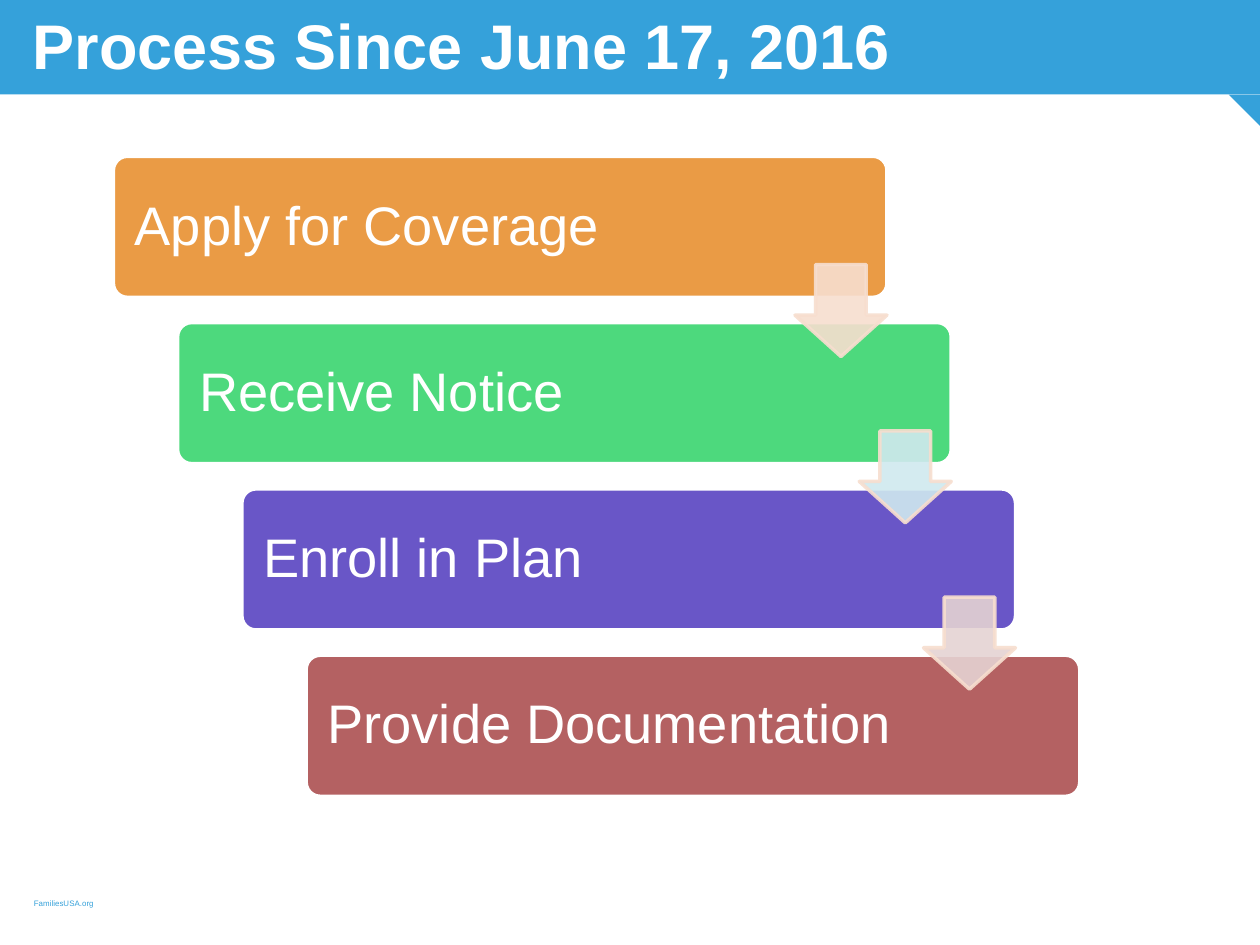
from lxml import etree
from pptx import Presentation
from pptx.dml.color import RGBColor
from pptx.enum.shapes import MSO_SHAPE
from pptx.enum.text import MSO_ANCHOR
from pptx.oxml.ns import qn
from pptx.util import Inches, Pt

RECTANGLE = MSO_SHAPE.RECTANGLE
ROUNDED = MSO_SHAPE.ROUNDED_RECTANGLE
TRIANGLE = MSO_SHAPE.RIGHT_TRIANGLE
ARROW = MSO_SHAPE.DOWN_ARROW
TOP, MIDDLE = MSO_ANCHOR.TOP, MSO_ANCHOR.MIDDLE

WIDTH, HEIGHT = 10, 7.5
BLUE, WHITE, PEACH = "35A1DA", "FFFFFF", "F7DECF"

# Staircase grid: first step, offset to the next one, and sizes
LEFT, FIRST_TOP = 0.9, 1.24
STEP_X, STEP_Y = 0.51, 1.32
STEP_WIDTH, STEP_HEIGHT = 6.14, 1.12
ARROW_SIZE = 0.73

STEPS = [
    ("Apply for Coverage", "EA9B45"),
    ("Receive Notice", "4DD97D"),
    ("Enroll in Plan", "6956C7"),
    ("Provide Documentation", "B46162"),
]
ARROW_FILLS = [PEACH, "D0E9EF", "E5D3D3"]


def color(hex_value):
    return RGBColor.from_string(hex_value)


def paint(fill, hex_value, opacity):
    fill.solid()
    fill.fore_color.rgb = color(hex_value)
    if opacity < 100:
        for srgb in fill._xPr.iter(qn("a:srgbClr")):
            etree.SubElement(srgb, qn("a:alpha"), val=str(opacity * 1000))


def add_shape(slide, kind, left, top, width, height, fill, line=None,
              adjustments=(), opacity=100):
    shape = slide.shapes.add_shape(
        kind, Inches(left), Inches(top), Inches(width), Inches(height))
    shape.shadow.inherit = False
    for index, value in enumerate(adjustments):
        shape.adjustments[index] = value
    paint(shape.fill, fill, opacity)
    if line:
        shape.line.width = Pt(2)
        paint(shape.line.fill, line, opacity)
    else:
        shape.line.fill.background()
    return shape


def add_text(slide, text, left, top, width, height, size, hex_value=WHITE,
             bold=False, anchor=TOP, inset=None, spacing=None):
    box = slide.shapes.add_textbox(
        Inches(left), Inches(top), Inches(width), Inches(height))
    frame = box.text_frame
    frame.word_wrap = True
    frame.vertical_anchor = anchor
    if inset is not None:
        frame.margin_left = frame.margin_right = Inches(inset)
        frame.margin_top = frame.margin_bottom = Inches(inset)
    paragraph = frame.paragraphs[0]
    paragraph.line_spacing = spacing
    run = paragraph.add_run()
    run.text = text
    run.font.name = "Arial"
    run.font.size = Pt(size)
    run.font.bold = bold
    run.font.color.rgb = color(hex_value)


def add_frame(slide):
    band, fold = HEIGHT / 10, WIDTH / 40
    add_shape(slide, RECTANGLE, 0, 0, WIDTH, band, BLUE)
    corner = add_shape(slide, TRIANGLE, WIDTH - fold, band, fold, fold, BLUE)
    corner.rotation = 180
    add_text(slide, "FamiliesUSA.org", 0.17, 7.08, 3.42, 0.18, 4.5, BLUE)
    add_text(slide, "Process Since June 17, 2016", 0.16, 0, 8.92, 0.71, 36,
             bold=True)


def add_step(slide, row, label, fill):
    left, top = LEFT + row * STEP_X, FIRST_TOP + row * STEP_Y
    add_shape(slide, ROUNDED, left, top, STEP_WIDTH, STEP_HEIGHT, fill,
              line=WHITE, adjustments=[0.1])
    add_text(slide, label, left + 0.04, top + 0.04, 4.84, 1.05, 31,
             anchor=MIDDLE, inset=0.13, spacing=0.9)


def add_step_arrow(slide, row, fill):
    # Right edge lines up with the step it leaves
    left = LEFT + row * STEP_X + STEP_WIDTH - ARROW_SIZE
    top = FIRST_TOP + row * STEP_Y + 0.86
    add_shape(slide, ARROW, left, top, ARROW_SIZE, ARROW_SIZE, fill,
              line=PEACH, adjustments=[0.55, 0.45], opacity=90)


def main():
    presentation = Presentation()
    presentation.slide_width = Inches(WIDTH)
    presentation.slide_height = Inches(HEIGHT)
    slide = presentation.slides.add_slide(presentation.slide_layouts[6])

    # Title band, corner fold and footer
    add_frame(slide)

    # Steps first, so that the arrows lie on top
    for row, (label, fill) in enumerate(STEPS):
        add_step(slide, row, label, fill)
    for row, fill in enumerate(ARROW_FILLS):
        add_step_arrow(slide, row, fill)

    presentation.save("out.pptx")


if __name__ == "__main__":
    main()
